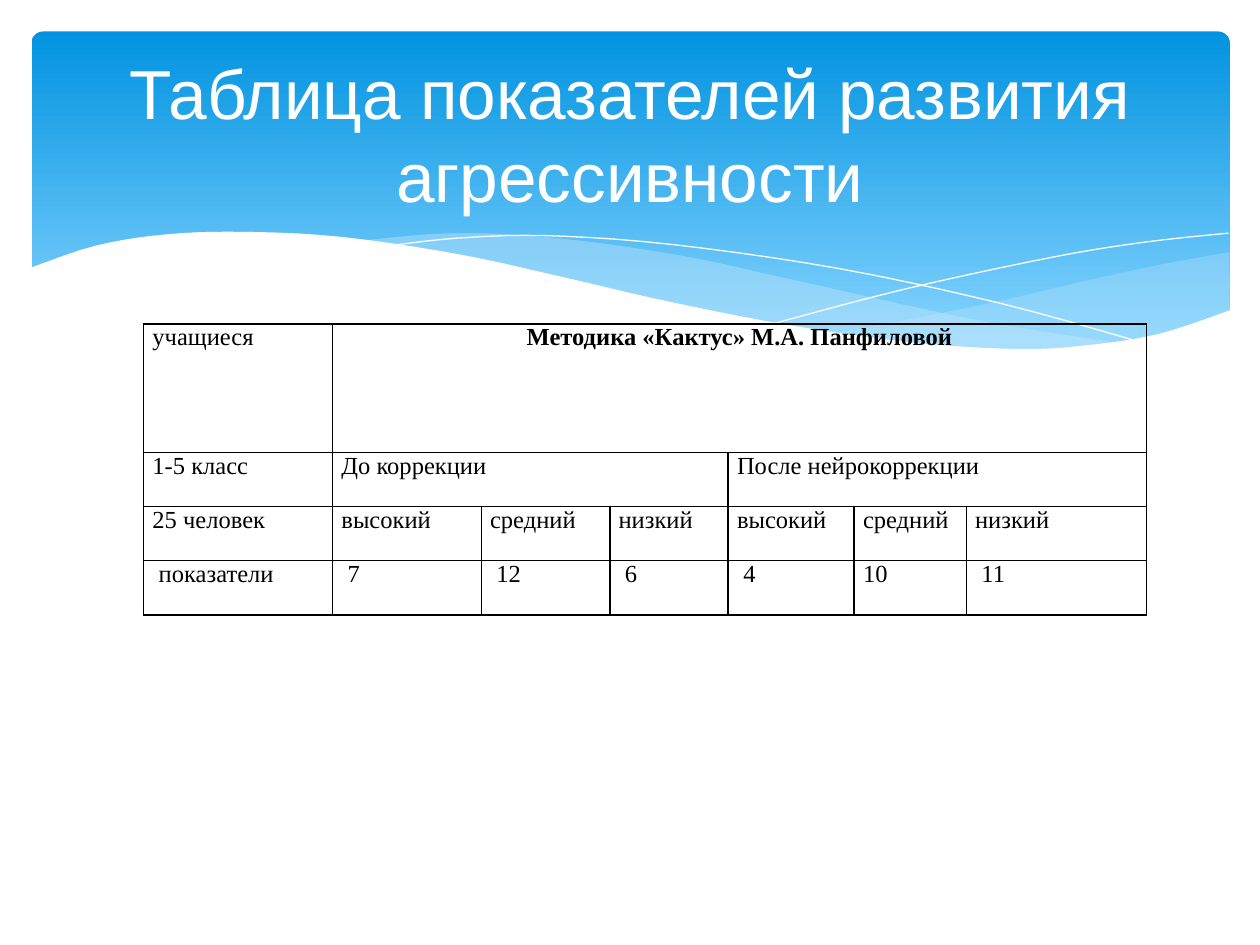
from lxml import etree
from pptx import Presentation, util as u
from pptx.dml.color import RGBColor
from pptx.enum import shapes, text
from pptx.oxml.ns import qn

WHITE = RGBColor(0xFF, 0xFF, 0xFF)
BLACK = RGBColor(0, 0, 0)
SKY = RGBColor(0x02, 0x93, 0xE0)
SKY_LIGHT = RGBColor(0x83, 0xD3, 0xFE)
MIST = RGBColor(0xC6, 0xE7, 0xFC)

COLUMNS, ROWS = 100, 75
STEPS = 5


def smooth(*knots):
    padded = [knots[0], *knots, knots[-1]]
    points = []
    for a, b, c, d in zip(padded, padded[1:], padded[2:], padded[3:]):
        for step in range(STEPS):
            t = step / STEPS
            points.append(tuple(
                q + t * (r - p) / 2 + t * t * (2 * p - 5 * q + 4 * r - s) / 2
                + t ** 3 * (3 * q - p - 3 * r + s) / 2
                for p, q, r, s in zip(a, b, c, d)))
    return points + [knots[-1]]


class WaveSlide:
    title_font, title_size = "Arial", u.Pt(39.6)
    table_font, table_size = "Times New Roman", u.Pt(14)
    padding, indent = 0.7, 1.2

    def __init__(self, presentation):
        self.column = presentation.slide_width / COLUMNS
        self.row = presentation.slide_height / ROWS
        self.slide = presentation.slides.add_slide(presentation.slide_layouts[5])

    def x(self, columns):
        return u.Emu(round(columns * self.column))

    def y(self, rows):
        return u.Emu(round(rows * self.row))

    def box(self, left, top, width, height):
        return self.x(left), self.y(top), self.x(width), self.y(height)

    def panel(self, *box):
        shape = self.slide.shapes.add_shape(
            shapes.MSO_SHAPE.ROUNDED_RECTANGLE, *self.box(*box))
        shape.adjustments[0] = 0.034
        shape.shadow.inherit = False
        shape.line.fill.background()
        shape.fill.gradient()
        shape.fill.gradient_angle = 270
        for stop, color, position in zip(
                shape.fill.gradient_stops, (SKY, SKY_LIGHT), (0, 0.9)):
            stop.color.rgb = color
            stop.position = position

    def outline(self, points, closed):
        (start_x, start_y), *rest = [(self.x(a), self.y(b)) for a, b in points]
        builder = self.slide.shapes.build_freeform(start_x, start_y)
        builder.add_line_segments(rest, close=closed)
        shape = builder.convert_to_shape()
        shape.shadow.inherit = False
        return shape

    def wave(self, points, color, opacity=100):
        shape = self.outline(points, True)
        shape.line.fill.background()
        shape.fill.solid()
        shape.fill.fore_color.rgb = color
        if opacity < 100:
            fill_color = shape.element.spPr.find(".//" + qn("a:srgbClr"))
            etree.SubElement(fill_color, qn("a:alpha"), val=str(opacity * 1000))

    def thread(self, points):
        shape = self.outline(points, False)
        shape.fill.background()
        shape.line.color.rgb = WHITE
        shape.line.width = u.Pt(0)

    def title(self, wording, *box):
        shape = self.slide.shapes.title
        shape.left, shape.top, shape.width, shape.height = self.box(*box)
        frame = shape.text_frame
        frame.text = wording
        frame.word_wrap = True
        frame.vertical_anchor = text.MSO_ANCHOR.MIDDLE
        paragraph = frame.paragraphs[0]
        paragraph.alignment = text.PP_ALIGN.CENTER
        paragraph.font.name = self.title_font
        paragraph.font.size = self.title_size
        paragraph.font.color.rgb = WHITE
        self.slide.shapes.element.append(shape.element)

    def borders(self, cell):
        properties = cell._tc.get_or_add_tcPr()
        for side in ("lnL", "lnR", "lnT", "lnB"):
            line = etree.SubElement(properties, qn("a:" + side), w=str(u.Pt(1)))
            fill = etree.SubElement(line, qn("a:solidFill"))
            etree.SubElement(fill, qn("a:srgbClr"), val=str(BLACK))

    def table(self, left, top, widths, heights, rows, spans, heading, indented):
        frame = self.slide.shapes.add_table(
            len(heights), len(widths),
            *self.box(left, top, sum(widths), sum(heights)))
        table = frame.table
        table.first_row = table.horz_banding = False
        for column, width in zip(table.columns, widths):
            column.width = self.x(width)
        for row, height in zip(table.rows, heights):
            row.height = self.y(height)
        for row, first, last in spans:
            table.cell(row, first).merge(table.cell(row, last))
        for r, row in enumerate(rows):
            for c in range(len(widths)):
                cell = table.cell(r, c)
                self.borders(cell)
                cell.fill.background()
                cell.margin_left = self.x(
                    self.indent if (r, c) in indented else self.padding)
                cell.margin_right = self.x(self.padding)
                cell.margin_top = cell.margin_bottom = 0
                if c not in row:
                    continue
                cell.text = row[c]
                paragraph = cell.text_frame.paragraphs[0]
                is_heading = (r, c) == heading
                paragraph.alignment = (text.PP_ALIGN.CENTER if is_heading
                                       else text.PP_ALIGN.JUSTIFY)
                paragraph.font.name = self.table_font
                paragraph.font.size = self.table_size
                paragraph.font.bold = is_heading
                paragraph.font.color.rgb = BLACK


def main():
    presentation = Presentation()
    presentation.slide_width, presentation.slide_height = u.Inches(10), u.Inches(7.5)
    page = WaveSlide(presentation)

    page.panel(2.5, 2.5, 95.1, 27)
    page.wave(
        smooth((97.6, 20), (92.1, 21), (86.1, 22.3), (77.9, 24.2), (66.1, 26.5))
        + smooth((66.1, 26.5), (71.9, 27.2), (80.3, 27.8), (87.2, 27.4),
                 (92.8, 26.3), (97.6, 24.7)), MIST, 29)
    page.wave(
        smooth((89.3, 27.3), (77.5, 25.4), (62.9, 22.2), (54.1, 20.3),
               (44.2, 18.9), (36.1, 18.5), (28.6, 19.1))
        + smooth((28.6, 19.1), (36.2, 20.3), (44.9, 22.2), (56.6, 24.8),
                 (68, 26.8), (78.5, 27.8), (89.3, 27.3)), MIST, 40)
    page.thread(smooth((30.9, 19.5), (36.3, 18.9), (43.3, 18.7), (53.3, 19.4),
                       (66.5, 21.3), (79.5, 24.1), (90.7, 27.2)))
    page.thread(smooth((61.3, 25.7), (72, 22.9), (83.6, 20.4),
                       (91, 19.2), (97.5, 18.5)))
    page.wave(
        smooth((97.7, 24.6), (92, 26.5), (86.3, 27.4), (80.9, 27.7),
               (72.6, 27.2), (62.6, 25.8), (52.9, 23.9), (44.7, 22),
               (36.5, 20.2), (27.1, 18.8), (19.3, 18.4), (13.2, 18.6),
               (7.6, 19.5), (2.3, 21.3))
        + [(2.3, 32.9), (97.7, 32.9)], WHITE)

    levels = ["высокий", "средний", "низкий"]
    rows = [
        {0: "учащиеся", 1: "Методика «Кактус» М.А. Панфиловой"},
        {0: "1-5 класс", 1: "До коррекции", 4: "После нейрокоррекции"},
        dict(enumerate(["25 человек"] + levels * 2)),
        dict(enumerate(["показатели", "7", "12", "6", "4", "10", "11"])),
    ]
    page.table(
        11.4, 25.7, [15, 11.8, 10.2, 9.4, 10, 8.9, 14.3], [10.2] + [4.3] * 3, rows,
        spans=[(0, 1, 6), (1, 1, 3), (1, 4, 6)], heading=(0, 1),
        indented={(3, c) for c in range(7) if c != 5})
    page.title("Таблица показателей развития агрессивности", 5, 3.7, 90, 13.7)
    presentation.save("out.pptx")


if __name__ == "__main__":
    main()
